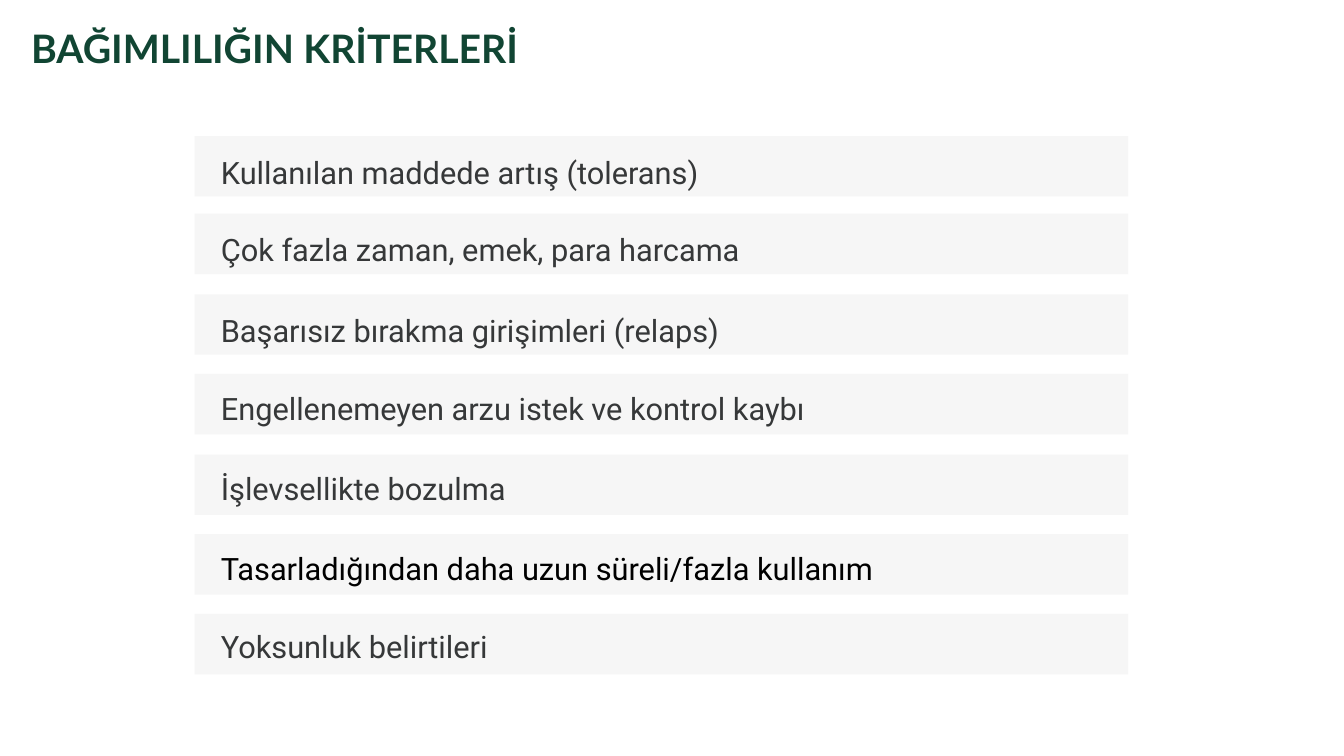
from pptx import Presentation
from pptx.dml.color import RGBColor
from pptx.enum import shapes
from pptx.util import Inches, Pt


def paint(target, color):
    """Give a fill a solid colour."""
    target.solid()
    target.fore_color.rgb = RGBColor.from_string(color)


def write(box, words, name, size, color):
    frame = box.text_frame
    frame.word_wrap = True
    frame.text = words
    font = frame.paragraphs[0].runs[0].font
    font.name = name
    font.size = Pt(size)
    paint(font.fill, color)
    return frame, font


deck = Presentation()
deck.slide_width = Inches(13.33)
deck.slide_height = Inches(7.5)
slide = deck.slides.add_slide(deck.slide_layouts[6])

title = slide.shapes.add_textbox(Inches(0.21), Inches(0.19), Inches(10.58), Inches(0.57))
frame, font = write(title, "BAĞIMLILIĞIN KRİTERLERİ", "Lato", 28, "114533")
font.bold = True

# Bar top, text top, wording, text colour, line spacing in points
rows = [
    (1.35, 1.51, "Kullanılan maddede artış (tolerans)", "363839", 27.4),
    (2.12, 2.27, "Çok fazla zaman, emek, para harcama", "363839", 27.4),
    (2.92, 3.08, "Başarısız bırakma girişimleri (relaps)", "363839", 27.4),
    (3.71, 3.85, "Engellenemeyen arzu istek ve kontrol kaybı", "363839", 27.4),
    (4.51, 4.65, "İşlevsellikte bozulma", "363839", 27.4),
    (5.3, 5.45, "Tasarladığından daha uzun süreli/fazla kullanım", "000000", None),
    (6.09, 6.21, "Yoksunluk belirtileri", "363839", 27.4),
]

for top, line, words, color, space in rows:
    bar = slide.shapes.add_shape(
        shapes.MSO_SHAPE.RECTANGLE, Inches(1.93), Inches(top), Inches(9.26), Inches(0.6))
    bar.shadow.inherit = False
    bar.line.fill.background()
    paint(bar.fill, "F6F6F6")

    label = slide.shapes.add_textbox(Inches(2.19), Inches(line), Inches(9.21), Inches(0.76))
    frame, font = write(label, words, "Roboto", 22, color)
    frame.margin_left = frame.margin_right = frame.margin_top = frame.margin_bottom = 0
    if space:
        frame.paragraphs[0].line_spacing = Pt(space)

deck.save("out.pptx")
